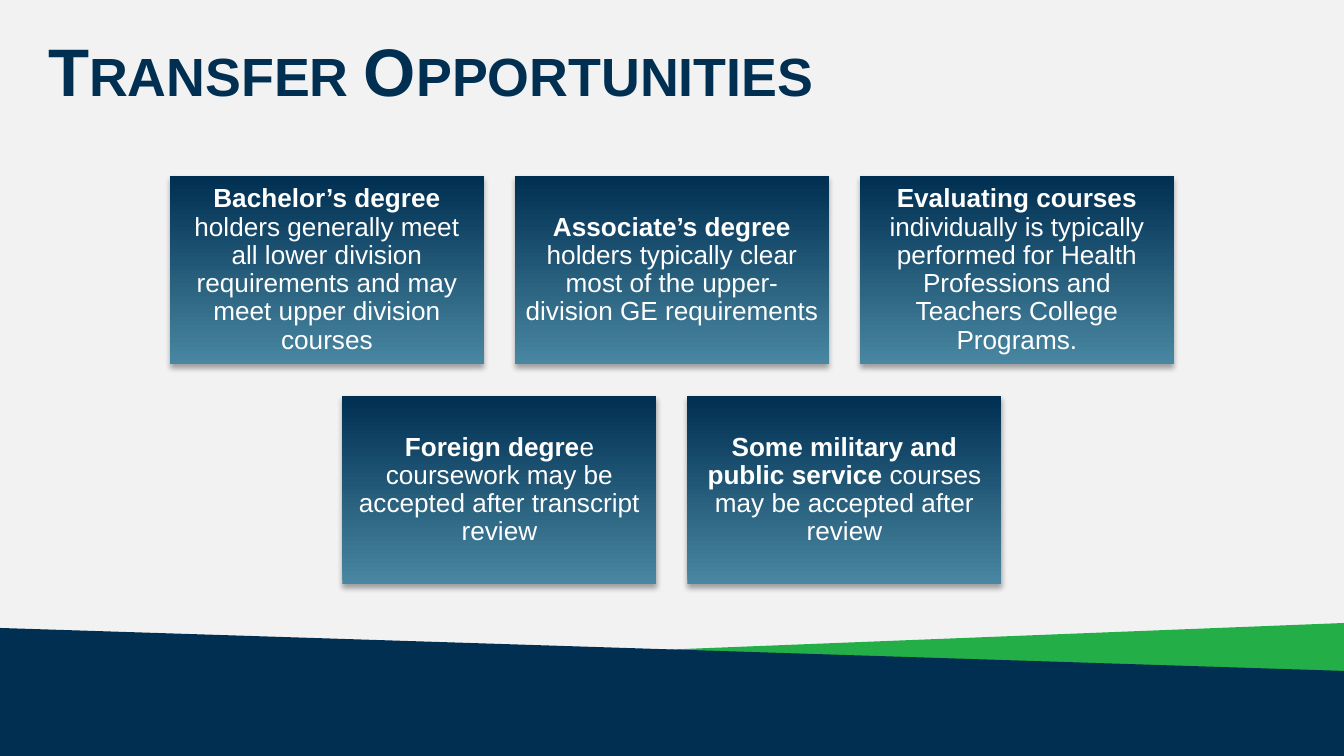
from dataclasses import dataclass

from lxml import etree
from pptx import Presentation
from pptx.dml.color import RGBColor
from pptx.enum.shapes import MSO_SHAPE
from pptx.enum.text import MSO_ANCHOR, PP_ALIGN
from pptx.oxml.ns import qn
from pptx.util import Emu, Pt

RECTANGLE = MSO_SHAPE.RECTANGLE
MIDDLE = MSO_ANCHOR.MIDDLE
CENTER = PP_ALIGN.CENTER

# Content: each card is (bold lead, rest of the sentence)
TITLE = "Transfer Opportunities"
CARD_ROWS = [
    [
        ("Bachelor’s degree ", "holders generally meet all lower division "
         "requirements and may meet upper division courses"),
        ("Associate’s degree ", "holders typically clear most of the "
         "upper-division GE requirements"),
        ("Evaluating courses", " individually is typically performed for "
         "Health Professions and Teachers College Programs."),
    ],
    [
        ("Foreign degre", "e coursework may be accepted after transcript review"),
        ("Some military and public service ",
         "courses may be accepted after review"),
    ],
]


@dataclass(frozen=True)
class Theme:
    font: str = "Arial"
    title_size: int = 36
    card_size: int = 14
    background: str = "F2F2F2"
    navy: str = "002F51"
    teal: str = "4886A1"
    green: str = "24AE48"
    white: str = "FFFFFF"
    shadow: str = "000000"


THEME = Theme()

# Layout in px
PAGE_WIDTH, PAGE_HEIGHT = 1344, 756
TITLE_BOX = (35, 15, 1275, 109)
CARD_WIDTH, CARD_HEIGHT, CARD_GAP, CARD_INSET = 314, 188, 31, 8
CARDS_TOP = 176
BANDS = [
    (THEME.green, [(1344, 623), (0, 676), (0, 744), (1344, 744)]),
    (THEME.navy, [(0, 628), (1344, 671), (1344, 756), (0, 756)]),
]
EMU_PER_PX = 914400 / 134.4


def px(value):
    return Emu(round(value * EMU_PER_PX))


def color(value):
    return RGBColor.from_string(value)


def add_span(para, text, size, ink, bold):
    span = para.add_run()
    span.text = text
    span.font.name = THEME.font
    span.font.size = Pt(size)
    span.font.bold = bold
    span.font.color.rgb = color(ink)
    return span


def add_band(page, fill, points):
    builder = page.shapes.build_freeform(*points[0], scale=EMU_PER_PX)
    builder.add_line_segments(points[1:], close=True)
    band = builder.convert_to_shape()
    band.shadow.inherit = False
    band.fill.solid()
    band.fill.fore_color.rgb = color(fill)
    band.line.fill.background()


def add_title(page):
    box = page.shapes.add_textbox(*map(px, TITLE_BOX))
    frame = box.text_frame
    frame.word_wrap = True
    frame.vertical_anchor = MIDDLE
    span = add_span(frame.paragraphs[0], TITLE, THEME.title_size, THEME.navy, True)
    span.font._element.set("cap", "small")


def add_drop_shadow(shape):
    shape.shadow.inherit = False
    effects = shape._element.spPr.find(qn("a:effectLst"))
    outer = etree.SubElement(effects, qn("a:outerShdw"), blurRad=str(Pt(3.1)),
                             dist=str(Pt(1.8)), dir="5400000", rotWithShape="0")
    tint = etree.SubElement(outer, qn("a:srgbClr"), val=THEME.shadow)
    etree.SubElement(tint, qn("a:alpha"), val="35000")


def add_card(page, left, top, lead, rest):
    card = page.shapes.add_shape(RECTANGLE, px(left), px(top),
                                 px(CARD_WIDTH), px(CARD_HEIGHT))
    card.fill.gradient()
    card.fill.gradient_angle = 90
    for stop, tone in zip(card.fill.gradient_stops, (THEME.teal, THEME.navy)):
        stop.color.rgb = color(tone)
    card.line.fill.background()
    add_drop_shadow(card)

    frame = card.text_frame
    frame.word_wrap = True
    frame.vertical_anchor = MIDDLE
    frame.margin_left = frame.margin_right = px(CARD_INSET)
    frame.margin_top = frame.margin_bottom = px(CARD_INSET)
    para = frame.paragraphs[0]
    para.alignment = CENTER
    para.line_spacing = 0.9
    add_span(para, lead, THEME.card_size, THEME.white, True)
    add_span(para, rest, THEME.card_size, THEME.white, False)


def main():
    deck = Presentation()
    deck.slide_width, deck.slide_height = px(PAGE_WIDTH), px(PAGE_HEIGHT)
    page = deck.slides.add_slide(deck.slide_layouts[6])
    page.background.fill.solid()
    page.background.fill.fore_color.rgb = color(THEME.background)

    # Footer bands and heading
    for fill, points in BANDS:
        add_band(page, fill, points)
    add_title(page)

    # Cards, each row centred on the page
    pitch = CARD_WIDTH + CARD_GAP
    for row, cards in enumerate(CARD_ROWS):
        row_left = (PAGE_WIDTH - len(cards) * pitch + CARD_GAP) / 2
        top = CARDS_TOP + row * (CARD_HEIGHT + CARD_GAP + 1)
        for column, (lead, rest) in enumerate(cards):
            add_card(page, row_left + column * pitch, top, lead, rest)

    deck.save("out.pptx")


if __name__ == "__main__":
    main()
